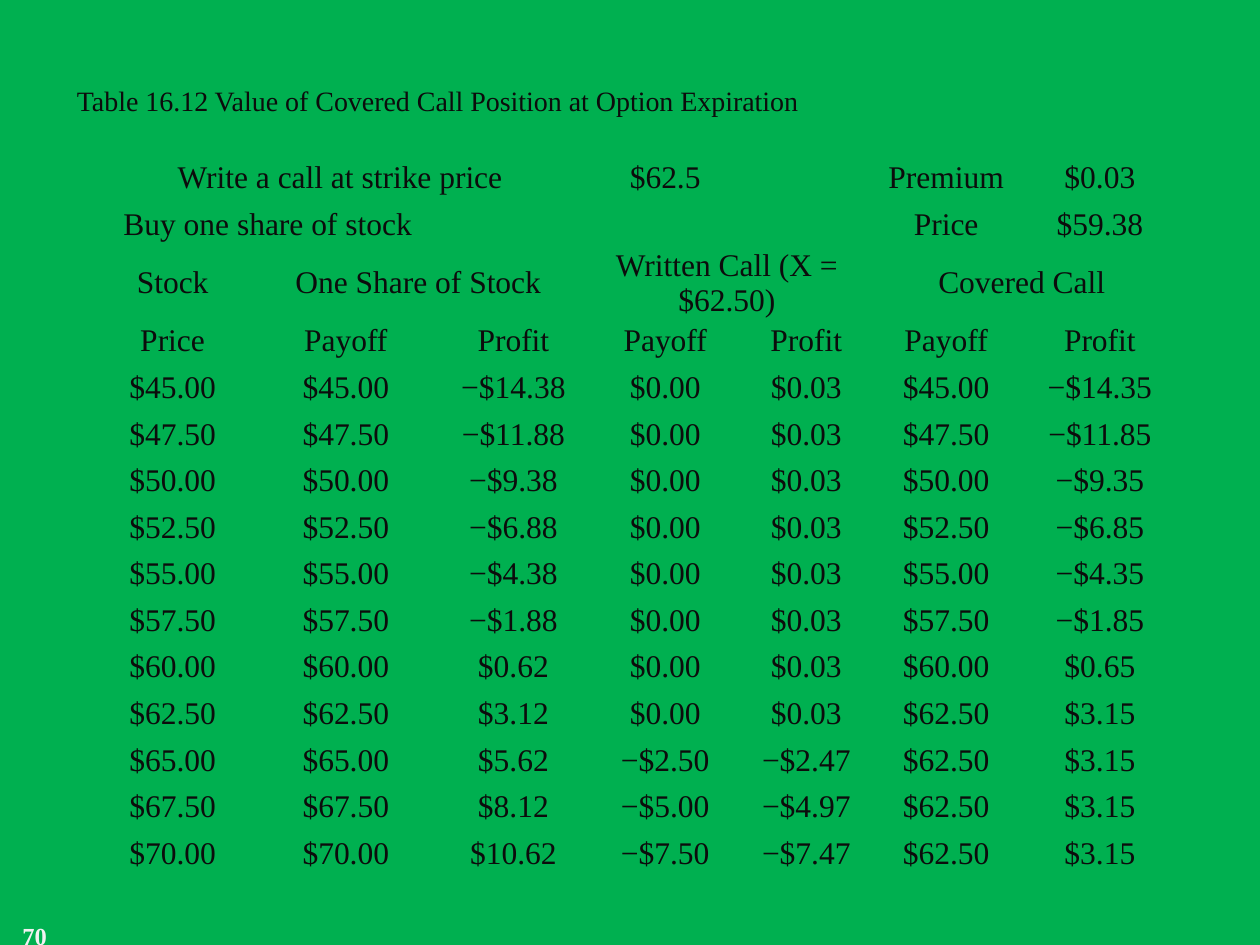
"""Build the slide with the covered call value table."""
from pptx import Presentation, util as u
from pptx.dml.color import RGBColor
from pptx.enum import text

FONT = "Times New Roman"
GREEN, INK, PALE = "00B050", "0C0C0C", "F2F2F2"
NO_GRID_STYLE = "{2D5ABB26-0587-4C30-8999-92F81FD0307C}"

TITLE = "Table 16.12 Value of Covered Call Position at Option Expiration"
PAGE = "70"
STRIKE, PREMIUM, COST = 62.5, 0.03, 59.38
STOCK_PRICES = [45 + 2.5 * step for step in range(11)]
HEADINGS = [
    ["Write a call at strike price", "", "", "$62.5", "", "Premium", "$0.03"],
    ["Buy one share of stock", "", "", "", "", "Price", "$59.38"],
    ["Stock", "One Share of Stock", "", "Written Call (X = $62.50)", "", "Covered Call", ""],
    ["Price"] + ["Payoff", "Profit"] * 3,
]
SPANS = [(0, 0, 2), (1, 0, 1), (2, 1, 2), (2, 3, 4), (2, 5, 6)]
COLUMN_WIDTHS = [1.24, 1.51, 1.15, 1.26, 0.98, 1.24, 1.2]
ROW_HEIGHT = 0.37


def color(code):
    return RGBColor.from_string(code)


def dollars(amount):
    return f"{'−' if amount < 0 else ''}${abs(amount):.2f}"


def outcome(price):
    """Return the table row for one stock price at expiration."""
    call = min(0, STRIKE - price)
    amounts = [price, price, price - COST, call, call + PREMIUM,
               price + call, price + call - COST + PREMIUM]
    return [dollars(amount) for amount in amounts]


def style(paragraph, size, code, align=text.PP_ALIGN.LEFT, bold=False):
    paragraph.alignment = align
    font = paragraph.font
    font.name, font.size, font.bold = FONT, u.Pt(size), bold
    font.color.rgb = color(code)


def place(shape, left, top, width, height):
    shape.left, shape.top = u.Inches(left), u.Inches(top)
    shape.width, shape.height = u.Inches(width), u.Inches(height)


def add_title(slide):
    title = slide.shapes.title
    place(title, 0.51, 0.6, 8.5, 0.39)
    frame = title.text_frame
    frame.text = TITLE
    frame.auto_size = text.MSO_AUTO_SIZE.NONE
    frame.vertical_anchor = text.MSO_ANCHOR.MIDDLE
    style(frame.paragraphs[0], 16, INK)


def add_values(slide):
    rows = HEADINGS + [outcome(price) for price in STOCK_PRICES]
    values = slide.shapes.add_table(
        len(rows), len(COLUMN_WIDTHS), u.Inches(0.75), u.Inches(1.23),
        u.Inches(sum(COLUMN_WIDTHS)), u.Inches(ROW_HEIGHT * len(rows))).table
    values.first_row = values.horz_banding = False
    values._tbl.tblPr[0].text = NO_GRID_STYLE
    for column, width in zip(values.columns, COLUMN_WIDTHS):
        column.width = u.Inches(width)
    for r, row in enumerate(rows):
        values.rows[r].height = u.Inches(ROW_HEIGHT)
        for c, label in enumerate(row):
            cell = values.cell(r, c)
            cell.text = label
            cell.fill.background()
            cell.vertical_anchor = text.MSO_ANCHOR.MIDDLE
            cell.margin_left = cell.margin_right = u.Inches(0.07)
            cell.margin_top = cell.margin_bottom = 0
            style(cell.text_frame.paragraphs[0], 18, INK, text.PP_ALIGN.CENTER)
    for r, first, last in SPANS:
        values.cell(r, first).merge(values.cell(r, last))


def add_page_number(slide):
    number = slide.shapes.add_textbox(
        u.Inches(0.08), u.Inches(7.26), u.Inches(2.33), u.Inches(0.4))
    number.text_frame.word_wrap = True
    number.text_frame.text = PAGE
    style(number.text_frame.paragraphs[0], 14, PALE, bold=True)


def main():
    deck = Presentation()
    deck.slide_width, deck.slide_height = u.Inches(10), u.Inches(7.5)
    slide = deck.slides.add_slide(deck.slide_layouts[5])
    slide.background.fill.solid()
    slide.background.fill.fore_color.rgb = color(GREEN)
    add_title(slide)
    add_values(slide)
    add_page_number(slide)
    deck.save("out.pptx")


if __name__ == "__main__":
    main()
